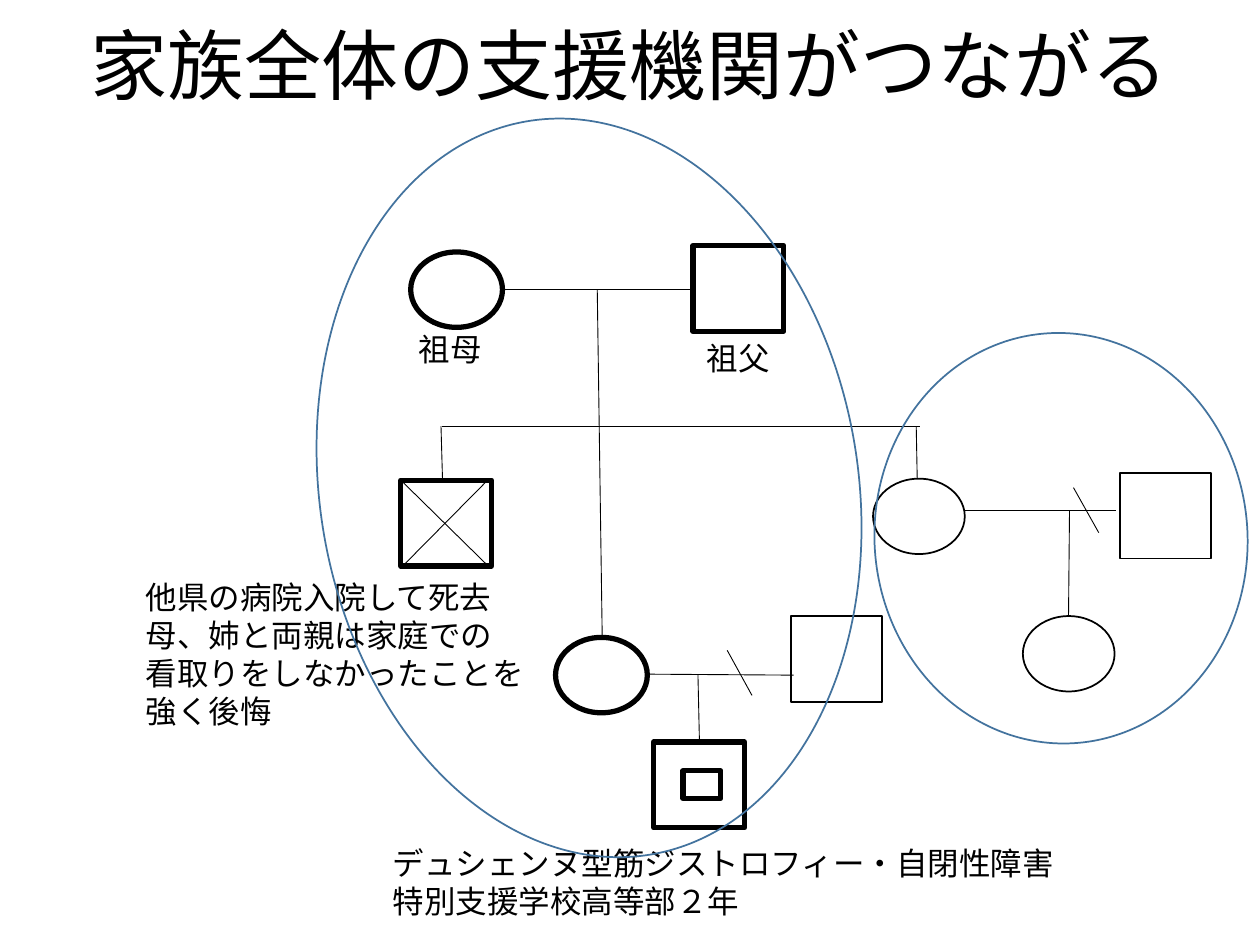
from lxml import etree
from pptx import Presentation
from pptx.dml.color import RGBColor
from pptx.enum.shapes import MSO_CONNECTOR, MSO_SHAPE
from pptx.enum.text import MSO_ANCHOR, MSO_AUTO_SIZE, PP_ALIGN
from pptx.oxml.ns import qn
from pptx.util import Cm, Pt

BLACK = RGBColor(0x00, 0x00, 0x00)
BLUE = RGBColor(0x43, 0x73, 0x9E)
OVAL, RECT = MSO_SHAPE.OVAL, MSO_SHAPE.RECTANGLE
STRAIGHT = MSO_CONNECTOR.STRAIGHT
LEFT, CENTER, RIGHT = PP_ALIGN.LEFT, PP_ALIGN.CENTER, PP_ALIGN.RIGHT
MIDDLE = MSO_ANCHOR.MIDDLE
GROW = MSO_AUTO_SIZE.SHAPE_TO_FIT_TEXT
FONT = "Calibri"
THICK, THIN, HAIR = 3, 1, 0.5


def outline(slide, kind, x, y, w, h, pen, color=BLACK, turn=0):
    """Draw an unfilled shape."""
    shape = slide.shapes.add_shape(kind, Cm(x), Cm(y), Cm(w), Cm(h))
    shape.shadow.inherit = False
    shape.fill.background()
    shape.line.color.rgb = color
    shape.line.width = Pt(pen)
    shape.rotation = turn


def woman(slide, x, y, pen):
    """Draw the round symbol of a woman."""
    outline(slide, OVAL, x, y, 1.85, 1.52, pen)


def man(slide, x, y, pen):
    """Draw the square symbol of a man."""
    outline(slide, RECT, x, y, 1.83, 1.73, pen)


def link(slide, x, y, *ends):
    """Draw hairlines whose ends are relative to x and y."""
    for x1, y1, x2, y2 in ends:
        line = slide.shapes.add_connector(
            STRAIGHT, Cm(x + x1), Cm(y + y1), Cm(x + x2), Cm(y + y2))
        line.line.color.rgb = BLACK
        line.line.width = Pt(HAIR)
        etree.SubElement(line._element.spPr, qn("a:effectLst"))


def write(para, text, size):
    """Add one run of black text."""
    run = para.add_run()
    run.text = text
    run.font.name = FONT
    run.font.size = Pt(size)
    run.font.color.rgb = BLACK


def note(slide, x, y, w, h, lines, align=LEFT):
    """Place a text box with one run for each line."""
    frame = slide.shapes.add_textbox(Cm(x), Cm(y), Cm(w), Cm(h)).text_frame
    frame.word_wrap = True
    frame.auto_size = GROW
    para = frame.paragraphs[0]
    para.alignment = align
    for i, text in enumerate(lines):
        if i:
            para.add_line_break()
        write(para, text, 18)


def heading(slide, x, y, w, h):
    """Move and fill the title placeholder."""
    title = slide.shapes.title
    title.left, title.top, title.width, title.height = Cm(x), Cm(y), Cm(w), Cm(h)
    title.text_frame.vertical_anchor = MIDDLE
    para = title.text_frame.paragraphs[0]
    para.alignment = CENTER
    para.line_spacing = 0.9
    write(para, "家族全体の支援機関がつながる", 44)


def elders(slide, x, y):
    """Draw the grandparents with their labels."""
    woman(slide, x, y + 0.13, THICK)
    man(slide, x + 5.69, y, THICK)
    link(slide, x, y, (1.85, 0.89, 5.69, 0.89))
    note(slide, x - 0.61, y + 1.57, 2.29, 1.02, ["祖母"], RIGHT)
    note(slide, x + 5.72, y + 1.75, 1.8, 1.02, ["祖父"])


def branch(slide, x, y):
    """Draw the lines of descent and the late uncle."""
    link(slide, x, y,
         (3.96, 0, 4.06, 7.01), (0.84, 2.75, 10.46, 2.75),
         (0.81, 2.75, 0.84, 3.81), (10.39, 2.75, 10.41, 3.81))
    man(slide, x, y + 3.84, THICK)
    link(slide, x, y, (0, 3.84, 1.75, 5.56), (0.05, 5.56, 1.75, 3.84))
    note(slide, x - 5.39, y + 5.69, 9.47, 3.33,
         ["他県の病院入院して死去", "母、姉と両親は家庭での",
          "看取りをしなかったことを", "強く後悔"])


def mother(slide, x, y):
    """Draw the divorced mother's household and her son."""
    woman(slide, x, y + 0.43, THICK)
    man(slide, x + 4.75, y, THIN)
    link(slide, x, y,
         (1.86, 1.17, 4.8, 1.19), (3.46, 0.69, 3.96, 1.6),
         (2.87, 1.19, 2.9, 2.54))
    man(slide, x + 1.98, y + 2.54, THICK)
    outline(slide, RECT, x + 2.57, y + 3.12, 0.76, 0.56, THICK)
    note(slide, x - 3.53, y + 4.47, 14.73, 1.8,
         ["デュシェンヌ型筋ジストロフィー・自閉性障害", "特別支援学校高等部２年"])


def aunt(slide, x, y):
    """Draw the divorced aunt's household and her daughter."""
    woman(slide, x, y + 0.12, THIN)
    man(slide, x + 4.98, y, THIN)
    link(slide, x, y,
         (1.83, 0.76, 4.9, 0.76), (4.04, 0.3, 4.55, 1.21),
         (3.96, 0.76, 3.94, 2.89))
    woman(slide, x + 3.02, y + 2.89, THIN)


def main():
    """Build the family tree slide."""
    deck = Presentation()
    deck.slide_width, deck.slide_height = Cm(25.4), Cm(19.05)
    slide = deck.slides.add_slide(deck.slide_layouts[5])
    heading(slide, 0, 0.03, 25.4, 2.74)
    elders(slide, 8.28, 4.95)
    branch(slide, 8.08, 5.84)
    mother(slide, 11.2, 12.42)
    aunt(slide, 17.6, 9.53)
    outline(slide, OVAL, 6.45, 2.34, 10.85, 14.99, THIN, BLUE, 350.4)
    outline(slide, OVAL, 17.63, 6.71, 7.52, 8.28, THIN, BLUE, 355.7)
    deck.save("out.pptx")


if __name__ == "__main__":
    main()
